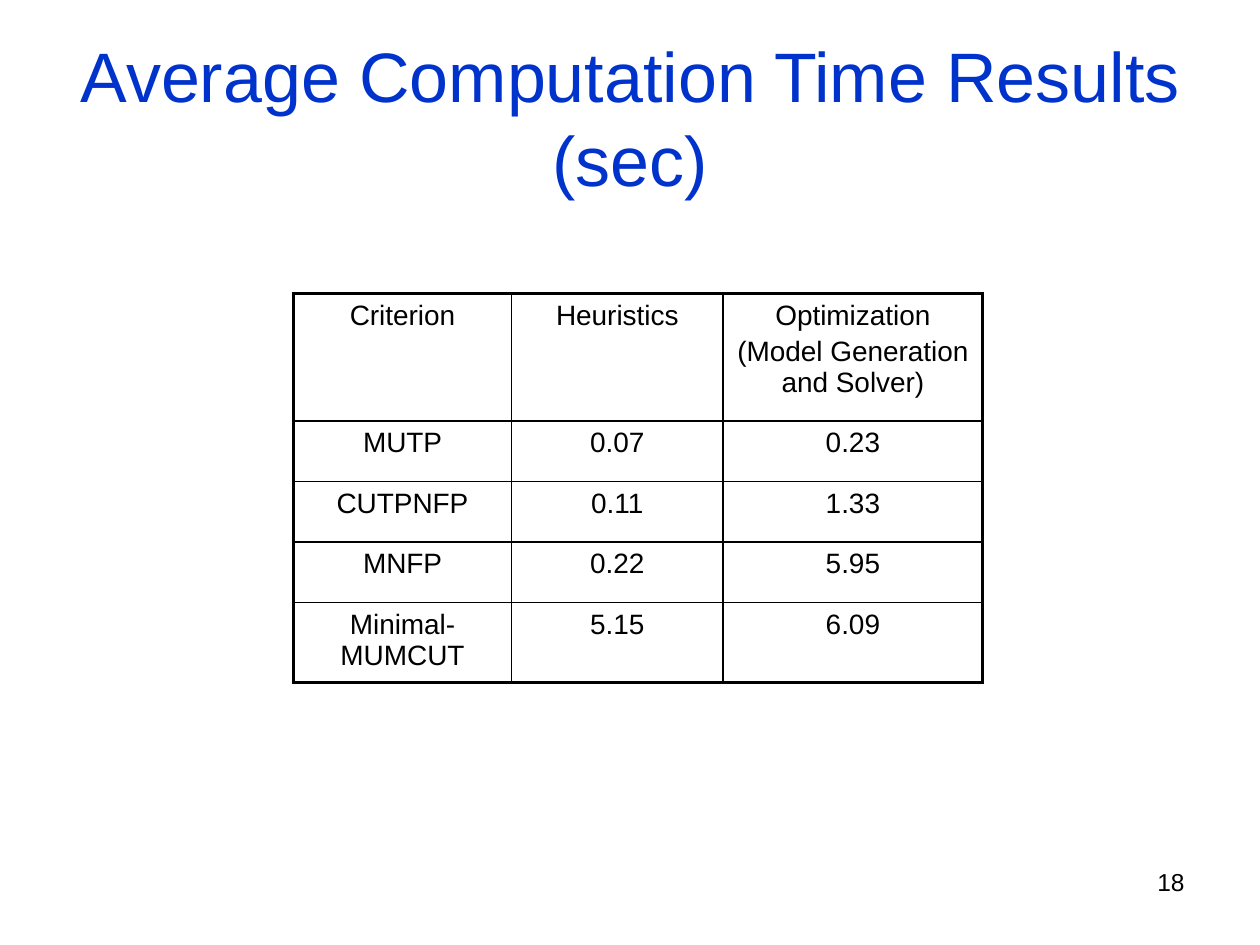
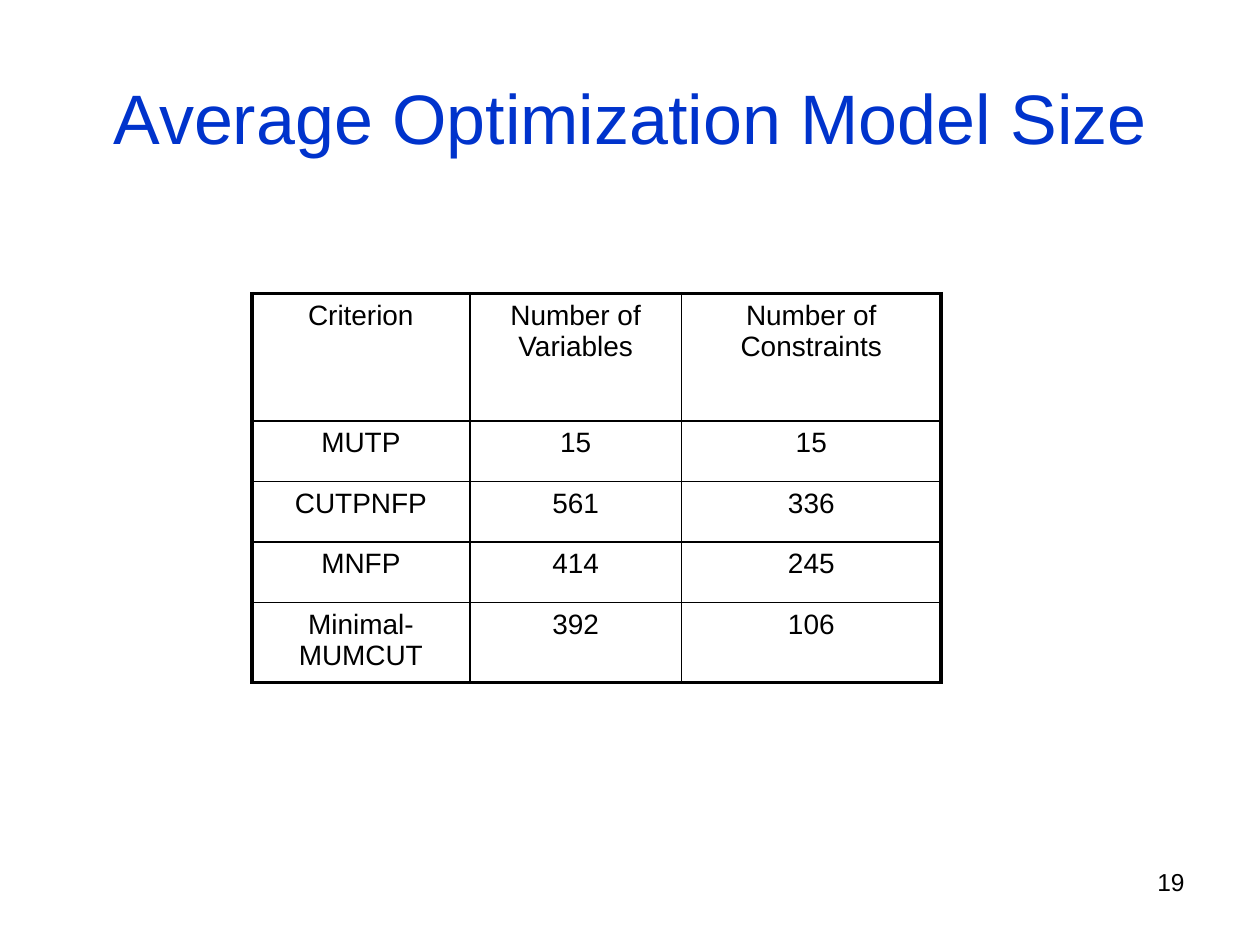
from lxml import etree
from pptx import Presentation
from pptx.dml.color import RGBColor
from pptx.enum import text
from pptx.oxml import ns
from pptx.util import Cm, Pt

BLACK = "000000"
TITLE_FORMAT = {"name": "Arial", "size": Pt(40), "bold": False, "color": "0033CC"}
CELL_FORMAT = {"name": "Arial", "size": Pt(16), "bold": False, "color": BLACK}
NUMBER_FORMAT = {"name": "Arial", "size": Pt(14), "bold": False, "color": BLACK}

TITLE_BOX = (1.27, 0.76, 22.86, 3.18)
NUMBER_BOX = (18.21, 17.35, 5.92, 1.32)
TABLE_TOP = 5.92
COLUMN_WIDTHS = (4.39, 4.27, 5.23)
HEADER_HEIGHT, BODY_HEIGHT = 2.57, 1.22
OUTER_LINE, INNER_LINE = 2.25, 1
TITLE_ONLY = 5

CRITERIA = ("MUTP", "CUTPNFP", "MNFP", "Minimal-MUMCUT")
RESULTS = (
    {
        "title": "Average Computation Time Results (sec)",
        "number": 18,
        "table_left": 5.92,
        "header": ("Criterion", "Heuristics",
                   "Optimization\n(Model Generation and Solver)"),
        "values": (("0.07", "0.23"), ("0.11", "1.33"),
                   ("0.22", "5.95"), ("5.15", "6.09")),
    },
    {
        "title": "Average Optimization Model Size",
        "number": 19,
        "table_left": 5.08,
        "header": ("Criterion", "Number of Variables", "Number of Constraints"),
        "values": (("15", "15"), ("561", "336"),
                   ("414", "245"), ("392", "106")),
    },
)


def rgb(hex_code):
    return RGBColor.from_string(hex_code)


def write(frame, content, font_format, alignment, space_before=0):
    """Fill a text frame, one paragraph for each line of content."""
    frame.word_wrap = True
    frame.text = content
    for paragraph in frame.paragraphs:
        paragraph.alignment = alignment
        paragraph.space_before = Pt(space_before)
        for run in paragraph.runs:
            for key, value in font_format.items():
                if key == "color":
                    run.font.color.rgb = rgb(value)
                else:
                    setattr(run.font, key, value)


def add_border(cell, side, points):
    properties = cell._tc.get_or_add_tcPr()
    line = etree.SubElement(properties, ns.qn(f"a:ln{side}"), w=str(Pt(points)))
    fill = etree.SubElement(line, ns.qn("a:solidFill"))
    etree.SubElement(fill, ns.qn("a:srgbClr"), val=BLACK)


def add_title(slide, content, box):
    title = slide.shapes.title
    title.left, title.top, title.width, title.height = map(Cm, box)
    write(title.text_frame, content, TITLE_FORMAT, text.PP_ALIGN.CENTER)
    title.text_frame.auto_size = text.MSO_AUTO_SIZE.NONE
    title.text_frame.vertical_anchor = text.MSO_ANCHOR.MIDDLE


def add_page_number(slide, number, box):
    page_number = slide.shapes.add_textbox(*map(Cm, box))
    write(page_number.text_frame, str(number), NUMBER_FORMAT, text.PP_ALIGN.RIGHT)


def add_results_table(slide, rows, left, top):
    """Place a ruled table with a heavy outer frame."""
    heights = [HEADER_HEIGHT] + [BODY_HEIGHT] * (len(rows) - 1)
    table = slide.shapes.add_table(
        len(rows), len(COLUMN_WIDTHS), Cm(left), Cm(top),
        Cm(sum(COLUMN_WIDTHS)), Cm(sum(heights))).table
    table.first_row = table.horz_banding = False
    for column, width in zip(table.columns, COLUMN_WIDTHS):
        column.width = Cm(width)
    for row, height in zip(table.rows, heights):
        row.height = Cm(height)

    last_row, last_column = len(rows) - 1, len(COLUMN_WIDTHS) - 1
    for r, row in enumerate(rows):
        for c, content in enumerate(row):
            cell = table.cell(r, c)
            write(cell.text_frame, content, CELL_FORMAT,
                  text.PP_ALIGN.CENTER, space_before=3.2)
            outer_sides = {"L": c == 0, "R": c == last_column,
                           "T": r == 0, "B": r == last_row}
            for side, is_outer in outer_sides.items():
                add_border(cell, side, OUTER_LINE if is_outer else INNER_LINE)
            cell.fill.background()


def add_results_slide(deck, result):
    slide = deck.slides.add_slide(deck.slide_layouts[TITLE_ONLY])
    add_page_number(slide, result["number"], NUMBER_BOX)
    add_title(slide, result["title"], TITLE_BOX)
    body = [(name, *values) for name, values in zip(CRITERIA, result["values"])]
    add_results_table(slide, [result["header"], *body],
                      result["table_left"], TABLE_TOP)


def main():
    deck = Presentation()
    deck.slide_width, deck.slide_height = Cm(25.4), Cm(19.05)
    for result in RESULTS:
        add_results_slide(deck, result)
    deck.save("out.pptx")


if __name__ == "__main__":
    main()
